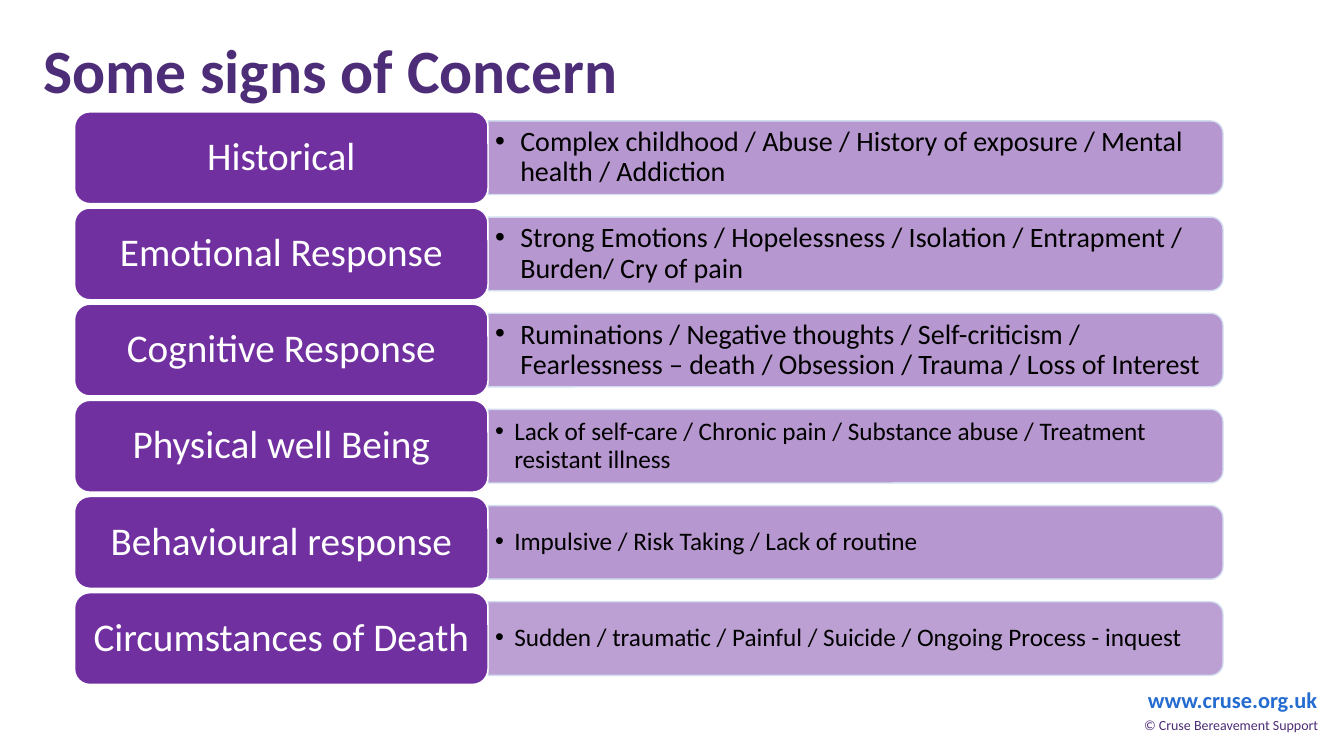
import pptx
import pptx.util
import pptx.dml.color
import pptx.enum.shapes
import pptx.enum.text
from lxml import etree

Inches, Pt = pptx.util.Inches, pptx.util.Pt
SHAPE = pptx.enum.shapes.MSO_SHAPE
ALIGN = pptx.enum.text.PP_ALIGN
ANCHOR = pptx.enum.text.MSO_ANCHOR

# Content
TITLE = "Some signs of Concern"
SITE = "www.cruse.org.uk"
RIGHTS = "© Cruse Bereavement Support"
# label, details, detail size, indent, bar opacity in percent
SIGNS = [
    ("Historical",
     "Complex childhood / Abuse / History of exposure / Mental health / Addiction",
     20, 0.25, 50),
    ("Emotional Response",
     "Strong Emotions / Hopelessness / Isolation / Entrapment / Burden/ Cry of pain",
     20, 0.25, 50),
    ("Cognitive Response",
     "Ruminations / Negative thoughts / Self-criticism / Fearlessness – death"
     " / Obsession / Trauma / Loss of Interest",
     20, 0.25, 50),
    ("Physical well Being",
     "Lack of self-care / Chronic pain / Substance abuse / Treatment resistant illness",
     18, 0.19, 50),
    ("Behavioural response",
     "Impulsive / Risk Taking / Lack of routine",
     18, 0.19, 50),
    ("Circumstances of Death",
     "Sudden / traumatic / Painful / Suicide / Ongoing Process - inquest",
     18, 0.19, 46),
]

THEME = {
    "font": "Calibri",
    "title": "4D2D78", "site": "256CD0", "label": "7030A0",
    "edge": "D2DEEF", "white": "FFFFFF", "black": "000000",
    "title_pt": 44, "label_pt": 28, "site_pt": 16, "rights_pt": 10,
}

# Layout
LEFT, TOP, LAST = 0.74, 1.11, 5.88
LABEL_W, LABEL_H = 4.1, 0.91
BAR_W, BAR_H = 7.29, 0.73
TEXT_W, TEXT_H = 7.25, 0.65
STEP = (LAST - TOP) / (len(SIGNS) - 1)


def color(name):
    return pptx.dml.color.RGBColor.from_string(THEME[name])


def write(frame, text, size, tone, bold=False, align=None):
    para = frame.paragraphs[0]
    para.alignment = align
    run = para.add_run()
    run.text = text
    run.font.name = THEME["font"]
    run.font.size = Pt(size)
    run.font.bold = bold
    run.font.color.rgb = color(tone)
    return para


def inset(frame, side, edge):
    frame.word_wrap = True
    frame.vertical_anchor = ANCHOR.MIDDLE
    frame.margin_left = frame.margin_right = Inches(side)
    frame.margin_top = frame.margin_bottom = Inches(edge)


def add_box(slide, x, y, w, h):
    return slide.shapes.add_textbox(Inches(x), Inches(y), Inches(w), Inches(h)).text_frame


def add_block(slide, kind, x, y, w, h, edge):
    block = slide.shapes.add_shape(kind, Inches(x), Inches(y), Inches(w), Inches(h))
    block.shadow.inherit = False
    block.fill.solid()
    block.fill.fore_color.rgb = color("label")
    block.line.color.rgb = color(edge)
    block.line.width = Pt(1)
    return block


def add_child(node, tag, **attrs):
    return etree.SubElement(node, pptx.oxml.ns.qn(tag), **attrs)


def add_bar(slide, x, mid, alpha):
    # An upright block turned a quarter, so its round corners face right
    bar = add_block(slide, SHAPE.ROUND_2_SAME_RECTANGLE,
                    x + (BAR_W - BAR_H) / 2, mid - BAR_W / 2, BAR_H, BAR_W, "edge")
    bar.rotation = 90
    tint = bar.fill._xPr.find(".//" + pptx.oxml.ns.qn("a:srgbClr"))
    add_child(tint, "a:alpha", val=str(alpha * 1000))


def add_detail(slide, x, mid, text, size, indent):
    frame = add_box(slide, x, mid - TEXT_H / 2, TEXT_W, TEXT_H)
    inset(frame, 0.07, 0.04)
    para = write(frame, text, size, "black")
    props = para._p.get_or_add_pPr()
    props.set("marL", str(Inches(indent)))
    props.set("indent", str(-Inches(indent)))
    add_child(props, "a:buFont", typeface="Arial")
    add_child(props, "a:buChar", char="•")
    para.level = 1
    para.line_spacing = 0.9


def add_label(slide, y, text):
    label = add_block(slide, SHAPE.ROUNDED_RECTANGLE, LEFT, y, LABEL_W, LABEL_H, "white")
    inset(label.text_frame, 0.12, 0.06)
    para = write(label.text_frame, text, THEME["label_pt"], "white", align=ALIGN.CENTER)
    para.line_spacing = 0.9


def main():
    deck = pptx.Presentation()
    deck.slide_width, deck.slide_height = Inches(13.33), Inches(7.5)
    slide = deck.slides.add_slide(deck.slide_layouts[6])

    # Footer
    for text, area, size, tone, bold in (
        (SITE, (11.26, 6.76, 1.93, 0.37), THEME["site_pt"], "site", True),
        (RIGHTS, (11.2, 7.06, 2.02, 0.27), THEME["rights_pt"], "title", False),
    ):
        frame = add_box(slide, *area)
        frame.word_wrap = False
        write(frame, text, size, tone, bold, ALIGN.CENTER)

    # Title
    frame = add_box(slide, 0.33, 0.27, 8.58, 0.84)
    frame.word_wrap = True
    write(frame, TITLE, THEME["title_pt"], "title", True)

    # Rows of signs
    for row, (name, text, size, indent, alpha) in enumerate(SIGNS):
        y = TOP + row * STEP
        mid = y + LABEL_H / 2
        add_bar(slide, LEFT + LABEL_W, mid, alpha)
        add_detail(slide, LEFT + LABEL_W, mid, text, size, indent)
        add_label(slide, y, name)

    deck.save("out.pptx")


if __name__ == "__main__":
    main()
